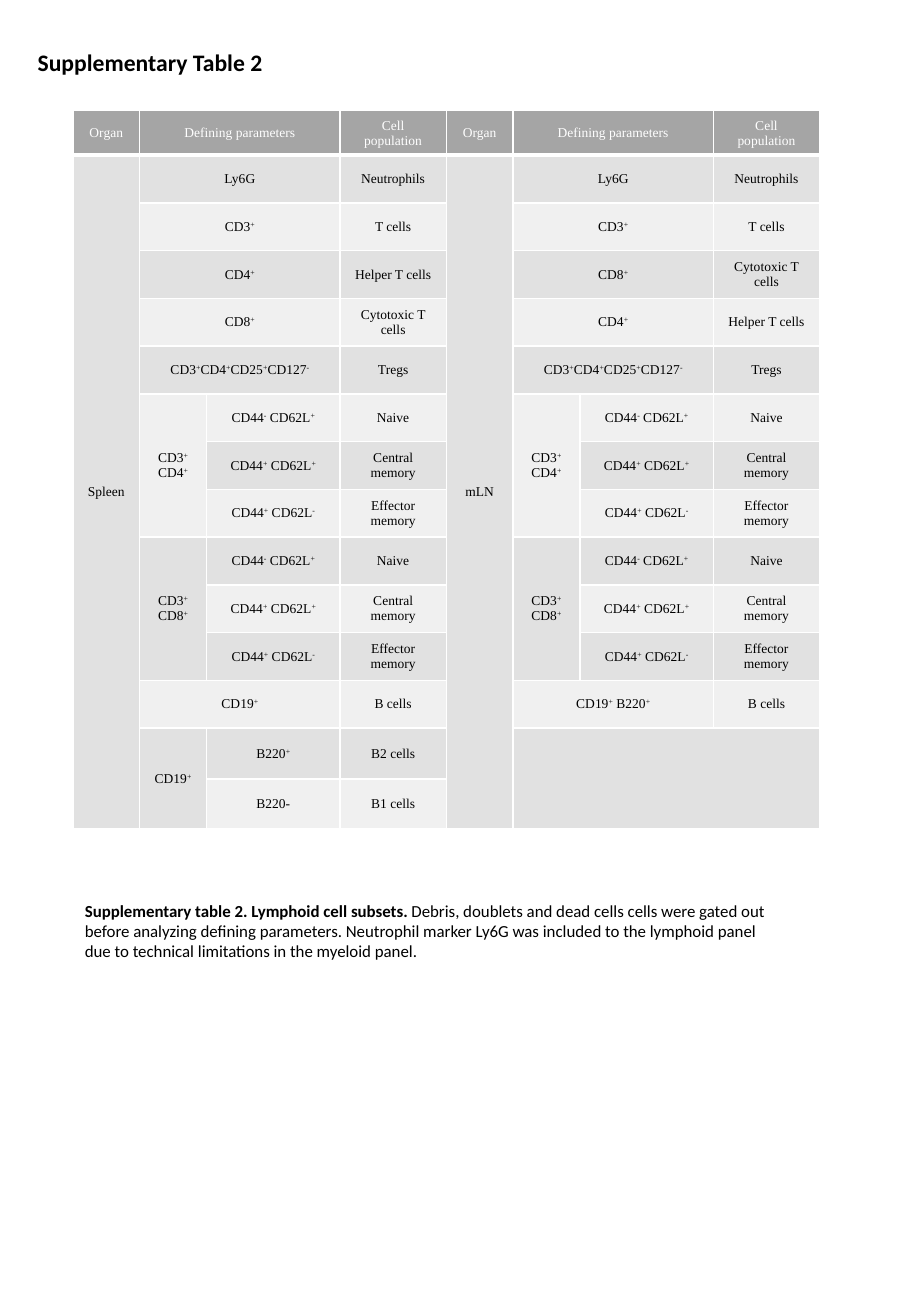
from dataclasses import dataclass
from itertools import product

from lxml.etree import SubElement
from pptx import Presentation
from pptx.dml.color import RGBColor
from pptx.enum.text import MSO_ANCHOR, MSO_AUTO_SIZE, PP_ALIGN
from pptx.oxml.ns import qn
from pptx.slide import Slide
from pptx.table import Table, _Cell
from pptx.text.text import Font
from pptx.util import Inches, Pt

COLORS = {
    "black": "000000",
    "white": "FFFFFF",
    "header": "A5A5A5",
    "dark_band": "E1E1E1",
    "light_band": "F0F0F0",
}
TABLE_FONT = "Times New Roman"
BODY_FONT = "Calibri"
GRID = Inches(0.1)
SLIDE_COLS, SLIDE_ROWS = 75, 108.3
PANEL_WIDTHS = [5.5, 5.5, 11, 8.74]
ROW_HEIGHTS = [3.66] + [3.93] * 12 + [4.2, 4.1]
PANEL_COLS = len(PANEL_WIDTHS)
LAST_ROWS = len(ROW_HEIGHTS) - 1


@dataclass(frozen=True)
class Box:
    col: float
    row: float
    cols: float
    rows: float

    def emu(self) -> list[int]:
        return [units(v) for v in (self.col, self.row, self.cols, self.rows)]


@dataclass(frozen=True)
class Entry:
    row: int
    col: int
    text: str
    rows: int = 1
    cols: int = 1


@dataclass(frozen=True)
class Panel:
    organ: str
    singles: list[tuple[str, str]]
    b_marker: str
    tail: list[Entry]


TITLE_BOX = Box(2.1, 2.3, 22.9, 5.9)
TABLE_BOX = Box(6, 9.1, 2 * sum(PANEL_WIDTHS), sum(ROW_HEIGHTS))
CAPTION_BOX = Box(6, 73.6, 58.2, 6.1)

HELPER = ("CD4^+", "Helper T cells")
CYTOTOXIC = ("CD8^+", "Cytotoxic T cells")
MEMORY_STATES = [
    ("CD44^- CD62L^+", "Naive"),
    ("CD44^+ CD62L^+", "Central memory"),
    ("CD44^+ CD62L^-", "Effector memory"),
]
PANELS = [
    Panel("Spleen", [HELPER, CYTOTOXIC], "CD19^+", [
        Entry(13, 1, "CD19^+", rows=2),
        Entry(13, 2, "B220^+"),
        Entry(13, 3, "B2 cells"),
        Entry(14, 2, "B220-"),
        Entry(14, 3, "B1 cells"),
    ]),
    Panel("mLN", [CYTOTOXIC, HELPER], "CD19^+ B220^+", [
        Entry(13, 1, "", rows=2, cols=3),
    ]),
]
CAPTION = [
    ("Supplementary table 2. Lymphoid cell subsets. ", True),
    ("Debris, doublets and dead cells cells were gated out before analyzing "
     "defining parameters. Neutrophil marker Ly6G was included to the lymphoid "
     "panel due to technical limitations in the myeloid panel.", False),
]


def units(value: float) -> int:
    return round(value * GRID)


def style(font: Font, name: str, size: float, color: str, bold: bool = False) -> None:
    font.name = name
    font.size = Pt(size)
    font.bold = bold
    font.color.rgb = RGBColor.from_string(COLORS[color])


def panel_entries(panel: Panel) -> list[Entry]:
    entries = [
        Entry(0, 0, "Organ"),
        Entry(0, 1, "Defining parameters", cols=2),
        Entry(0, 3, "Cell population"),
        Entry(1, 0, panel.organ, rows=LAST_ROWS),
    ]
    singles = [("Ly6G", "Neutrophils"), ("CD3^+", "T cells"), *panel.singles,
               ("CD3^+CD4^+CD25^+CD127^-", "Tregs")]
    numbered = [*enumerate(singles, 1), (12, (panel.b_marker, "B cells"))]
    for row, (marker, population) in numbered:
        entries += [Entry(row, 1, marker, cols=2), Entry(row, 3, population)]
    for top, marker in ((6, "CD4^+"), (9, "CD8^+")):
        entries.append(Entry(top, 1, f"CD3^+\n{marker}", rows=3))
        for row, (state, population) in enumerate(MEMORY_STATES, top):
            entries += [Entry(row, 2, state), Entry(row, 3, population)]
    return entries + panel.tail


def write_markers(cell: _Cell, text: str, color: str) -> None:
    tf = cell.text_frame
    for i, line in enumerate(text.split("\n")):
        p = tf.add_paragraph() if i else tf.paragraphs[0]
        p.alignment = PP_ALIGN.CENTER
        first, *others = line.split("^")
        pieces = [(first, False)]
        for other in others:
            pieces += [(other[0], True), (other[1:], False)]
        for piece, raised in pieces:
            if piece:
                r = p.add_run()
                r.text = piece
                style(r.font, TABLE_FONT, 8, color)
                if raised:
                    r.font._element.set("baseline", "30000")


def prepare_cell(cell: _Cell, row: int) -> None:
    cell.vertical_anchor = MSO_ANCHOR.MIDDLE
    cell.margin_left = cell.margin_right = Inches(0.12)
    cell.margin_top = cell.margin_bottom = Inches(0.06)
    tcPr = cell._tc.get_or_add_tcPr()
    for side in ("L", "R", "T", "B"):
        width = 3 if row == 0 and side == "B" else 1
        ln = SubElement(tcPr, qn(f"a:ln{side}"), w=str(Pt(width)))
        fill = SubElement(ln, qn("a:solidFill"))
        SubElement(fill, qn("a:srgbClr"), val=COLORS["white"])
    band = "header" if row == 0 else "dark_band" if row % 2 else "light_band"
    cell.fill.solid()
    cell.fill.fore_color.rgb = RGBColor.from_string(COLORS[band])


def fill_table(table: Table) -> None:
    for column, width in zip(table.columns, PANEL_WIDTHS * 2):
        column.width = units(width)
    for row, height in zip(table.rows, ROW_HEIGHTS):
        row.height = units(height)
    for row, col in product(range(len(ROW_HEIGHTS)), range(2 * PANEL_COLS)):
        prepare_cell(table.cell(row, col), row)
    for i, panel in enumerate(PANELS):
        for e in panel_entries(panel):
            col = i * PANEL_COLS + e.col
            cell = table.cell(e.row, col)
            if e.rows * e.cols > 1:
                cell.merge(table.cell(e.row + e.rows - 1, col + e.cols - 1))
            write_markers(cell, e.text, "black" if e.row else "white")
    for cell in table.iter_cells():
        p = cell.text_frame.paragraphs[0]
        if not p.runs:
            SubElement(p._p, qn("a:endParaRPr"), sz="800")


def add_title(s: Slide) -> None:
    sp = s.shapes.title
    sp.left, sp.top, sp.width, sp.height = TITLE_BOX.emu()
    tf = sp.text_frame
    tf.text = "Supplementary Table 2"
    tf.word_wrap = True
    tf.auto_size = MSO_AUTO_SIZE.NONE
    tf.vertical_anchor = MSO_ANCHOR.MIDDLE
    p = tf.paragraphs[0]
    p.alignment = PP_ALIGN.LEFT
    p.line_spacing = 0.9
    style(p.runs[0].font, BODY_FONT, 14, "black", True)


def add_caption(s: Slide) -> None:
    tf = s.shapes.add_textbox(*CAPTION_BOX.emu()).text_frame
    tf.word_wrap = True
    tf.auto_size = MSO_AUTO_SIZE.SHAPE_TO_FIT_TEXT
    for text, bold in CAPTION:
        r = tf.paragraphs[0].add_run()
        r.text = text
        style(r.font, BODY_FONT, 10, "black", bold)


def main() -> None:
    prs = Presentation()
    prs.slide_width, prs.slide_height = units(SLIDE_COLS), units(SLIDE_ROWS)
    s = prs.slides.add_slide(prs.slide_layouts[5])
    add_title(s)
    frame = s.shapes.add_table(len(ROW_HEIGHTS), 2 * PANEL_COLS, *TABLE_BOX.emu())
    fill_table(frame.table)
    add_caption(s)
    prs.save("out.pptx")


if __name__ == "__main__":
    main()
